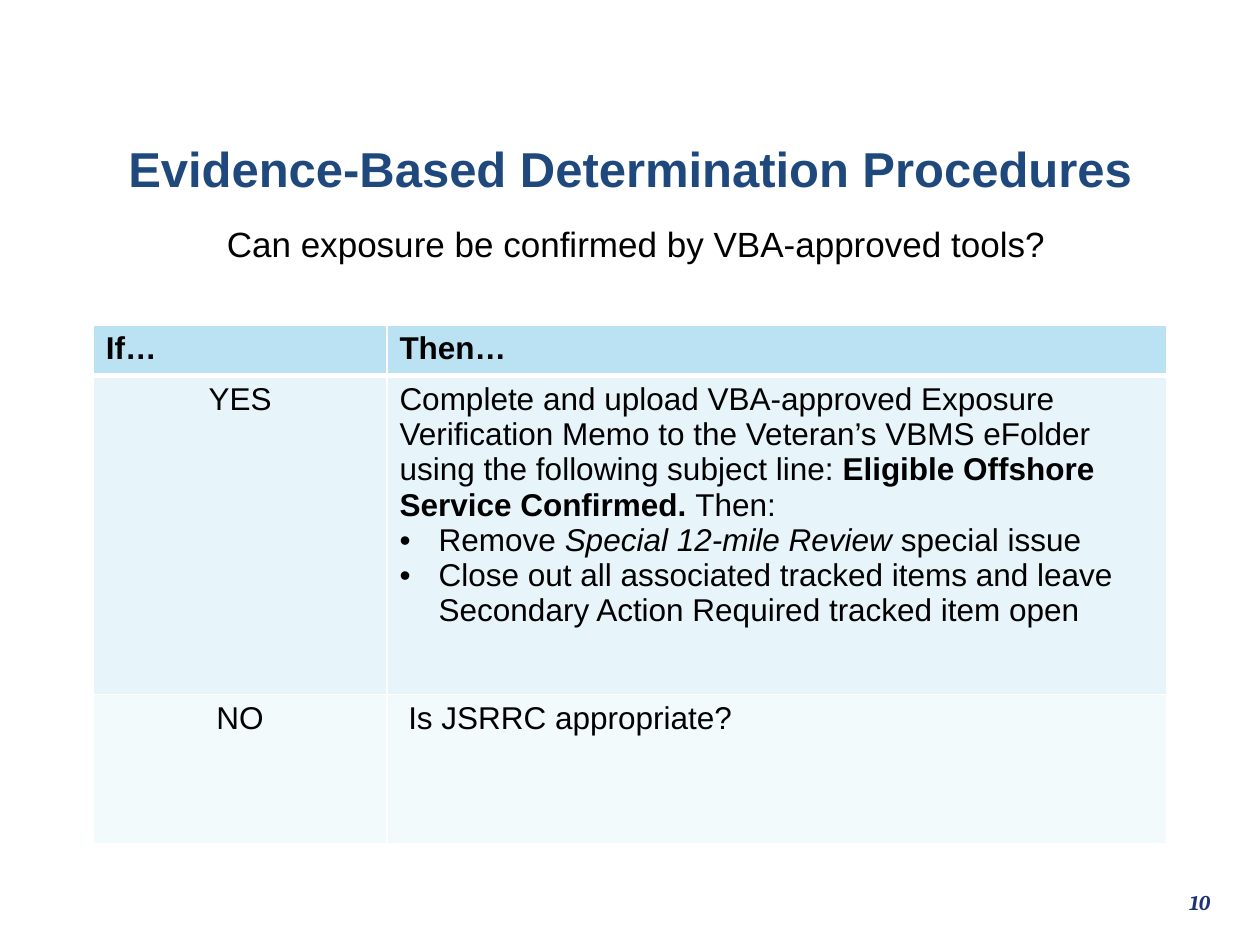
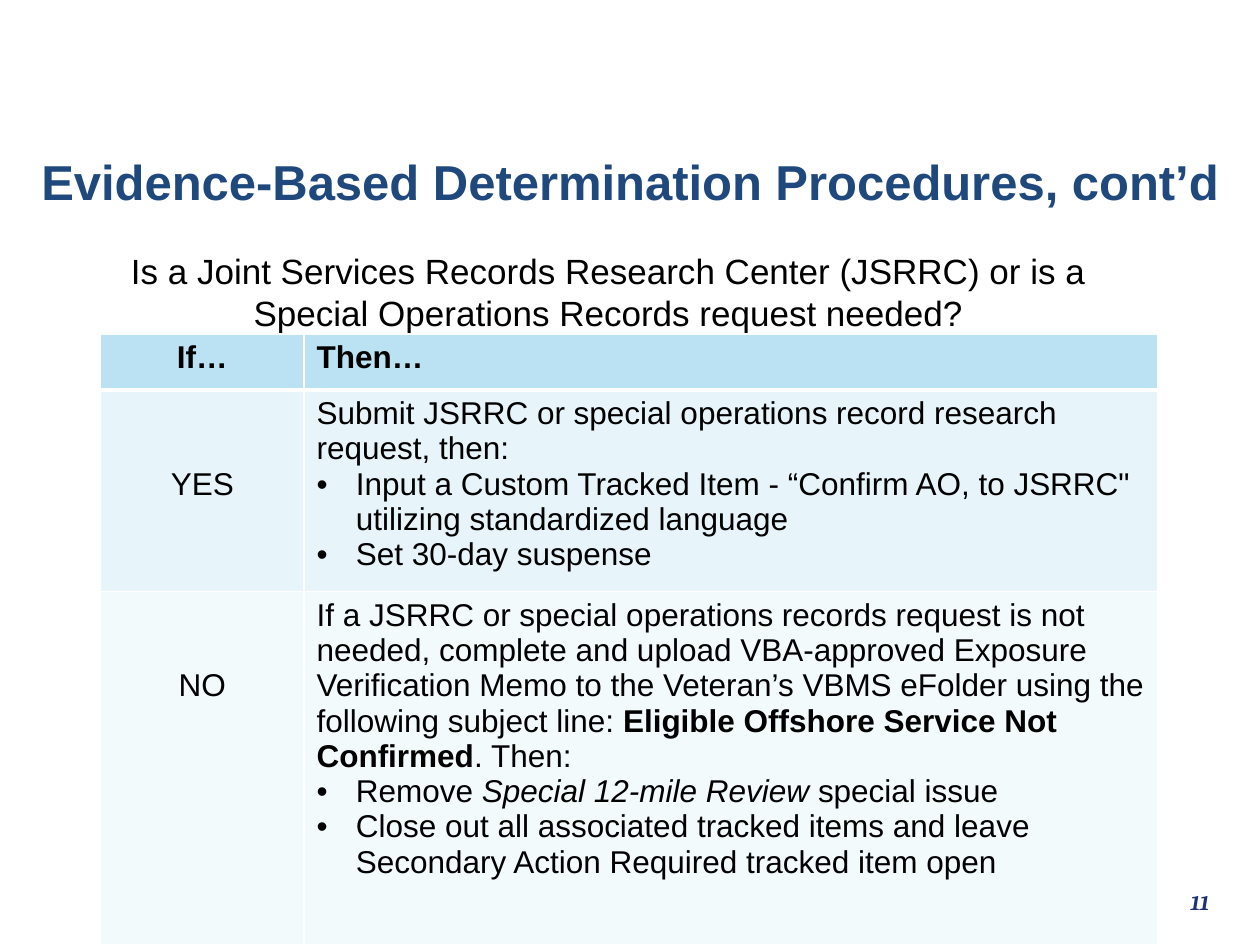
from lxml import etree
from pptx import Presentation
from pptx.dml.color import RGBColor
from pptx.enum.text import MSO_ANCHOR, PP_ALIGN
from pptx.oxml.ns import qn
from pptx.util import Cm, Pt

MID, TOP = MSO_ANCHOR.MIDDLE, MSO_ANCHOR.TOP
LEFT, CENTER = PP_ALIGN.LEFT, PP_ALIGN.CENTER

HUES = {"title": "1F497D", "page": "1D3275", "text": "000000", "line": "FFFFFF",
        "head": "BBE2F2", "yes": "E7F4FA", "no": "F3FAFC"}
FILLS = ("head", "yes", "no")
HANG = 0.79

CLOSE = [
    ("•", [("Remove ", ""), ("Special 12-mile Review", "i"), (" special issue", "")]),
    ("•", [("Close out all associated tracked items and leave "
            "Secondary Action Required tracked item open", "")]),
]

SLIDES = [
    {
        "title": "Evidence-Based Determination Procedures",
        "page": "10",
        "ask": "Can exposure be confirmed by VBA-approved tools?",
        "title_top": 2.13,
        "ask_at": (2.59, 4.37, 20.47, 1.12),
        "grid_at": (1.88, 6.55),
        "cols": (5.92, 15.72),
        "rows": (1.0, 6.43, 3.02),
        "if_align": LEFT,
        "drop": 0.13,
        "then": [
            [("", [("Complete and upload VBA-approved Exposure Verification Memo to the "
                    "Veteran’s VBMS eFolder using the following subject line: ", ""),
                   ("Eligible Offshore Service Confirmed. ", "b"), ("Then:", "")])] + CLOSE,
            [("", [(" Is JSRRC appropriate?", "")])],
        ],
    },
    {
        "title": "Evidence-Based Determination Procedures, cont’d",
        "page": "11",
        "ask": "Is a Joint Services Records Research Center (JSRRC) or is a "
               "Special Operations Records request needed?",
        "title_top": 2.39,
        "ask_at": (2.03, 4.9, 20.47, 1.96),
        "grid_at": (2.03, 6.73),
        "cols": (4.1, 17.21),
        "rows": (1.13, 4.06, 7.13),
        "if_align": CENTER,
        "drop": 1.55,
        "then": [
            [("", [("Submit JSRRC or special operations record research request, then:", "")]),
             ("•", [("Input a Custom Tracked Item - “Confirm AO, to JSRRC\" "
                     "utilizing standardized language", "")]),
             ("•", [("Set 30-day suspense", "")])],
            [("", [("If a JSRRC or special operations records request is not needed, complete "
                    "and upload VBA-approved Exposure Verification Memo to the Veteran’s VBMS "
                    "eFolder using the following subject line: ", ""),
                   ("Eligible Offshore Service Not Confirmed", "b"), (". Then:", "")])] + CLOSE,
        ],
    },
]


def style(run, size, hue, marks="", face="Arial"):
    font = run.font
    font.name, font.size = face, Pt(size)
    font.bold, font.italic = "b" in marks, "i" in marks
    font.color.rgb = RGBColor.from_string(HUES[hue])


def label(slide, text, at, size, hue, marks="", face="Arial", anchor=TOP):
    frame = slide.shapes.add_textbox(*map(Cm, at)).text_frame
    frame.word_wrap = True
    frame.vertical_anchor = anchor
    para = frame.paragraphs[0]
    para.text = text
    para.alignment = CENTER
    style(para.runs[0], size, hue, marks, face)


def bullet(para, mark):
    props = para._p.get_or_add_pPr()
    props.set("marL", str(Cm(HANG)))
    props.set("indent", str(-Cm(HANG)))
    etree.SubElement(props, qn("a:buFont")).set("typeface", "Arial")
    etree.SubElement(props, qn("a:buChar")).set("char", mark)


def border(cell, row):
    props = cell._tc.get_or_add_tcPr()
    wide = {"L": 1, "R": 1, "T": 3 if row == 1 else 1, "B": 3 if row == 0 else 1}
    for spot, (side, width) in enumerate(wide.items()):
        line = etree.Element(qn("a:ln" + side), w=str(Pt(width)))
        fill = etree.SubElement(line, qn("a:solidFill"))
        etree.SubElement(fill, qn("a:srgbClr")).set("val", HUES["line"])
        props.insert(spot, line)


def write(cell, paras, align):
    frame = cell.text_frame
    for num, (mark, runs) in enumerate(paras):
        para = frame.add_paragraph() if num else frame.paragraphs[0]
        para.alignment = align
        if mark:
            bullet(para, mark)
        for text, marks in runs:
            run = para.add_run()
            run.text = text
            style(run, 18, "text", marks)


def grid(slide, page):
    cols, rows = page["cols"], page["rows"]
    size = (sum(cols), sum(rows))
    table = slide.shapes.add_table(
        len(rows), len(cols), *map(Cm, page["grid_at"] + size)).table
    for col, width in zip(table.columns, cols):
        col.width = Cm(width)
    heads = [[("", [(word, "b")])] for word in ("If…", "Then…")]
    keys = [[("", [(word, "")])] for word in ("YES", "NO")]
    cells = [heads, *zip(keys, page["then"])]
    for r, pair in enumerate(cells):
        table.rows[r].height = Cm(rows[r])
        for c, paras in enumerate(pair):
            cell = table.cell(r, c)
            cell.fill.solid()
            cell.fill.fore_color.rgb = RGBColor.from_string(HUES[FILLS[r]])
            border(cell, r)
            if c:
                align = LEFT
            else:
                align = CENTER if r else page["if_align"]
                if r:
                    cell.margin_top = Cm(page["drop"])
            write(cell, paras, align)


def main():
    deck = Presentation()
    deck.slide_width, deck.slide_height = Cm(25.4), Cm(19.05)
    for page in SLIDES:
        slide = deck.slides.add_slide(deck.slide_layouts[6])
        label(slide, page["title"], (0, page["title_top"], 25.4, 2.51),
              28, "title", "b", anchor=MID)
        label(slide, page["page"], (22.5, 17.7, 3.38, 0.97),
              12, "page", "bi", "Cambria", MID)
        label(slide, page["ask"], page["ask_at"], 20, "text")
        grid(slide, page)
    deck.save("out.pptx")


if __name__ == "__main__":
    main()
